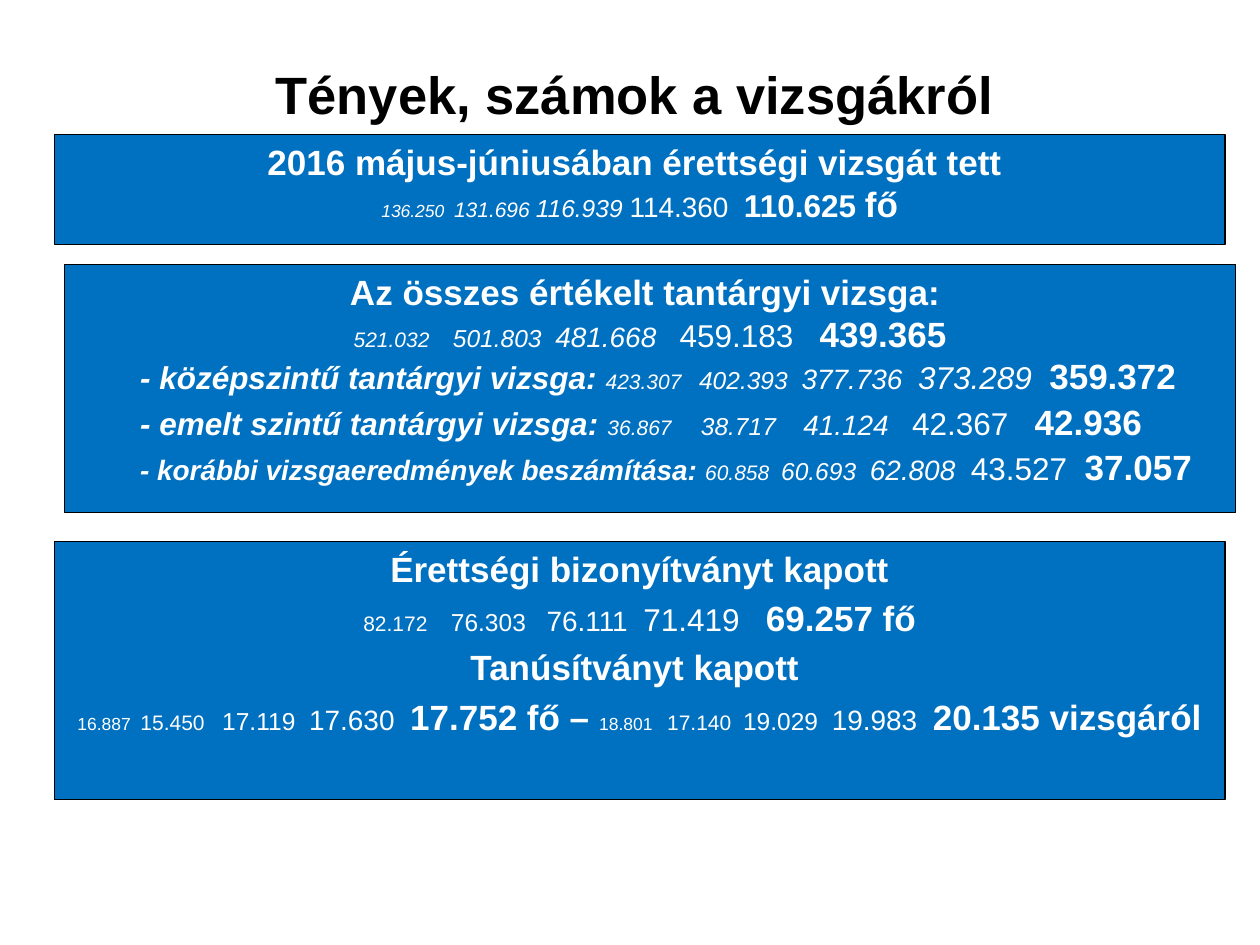
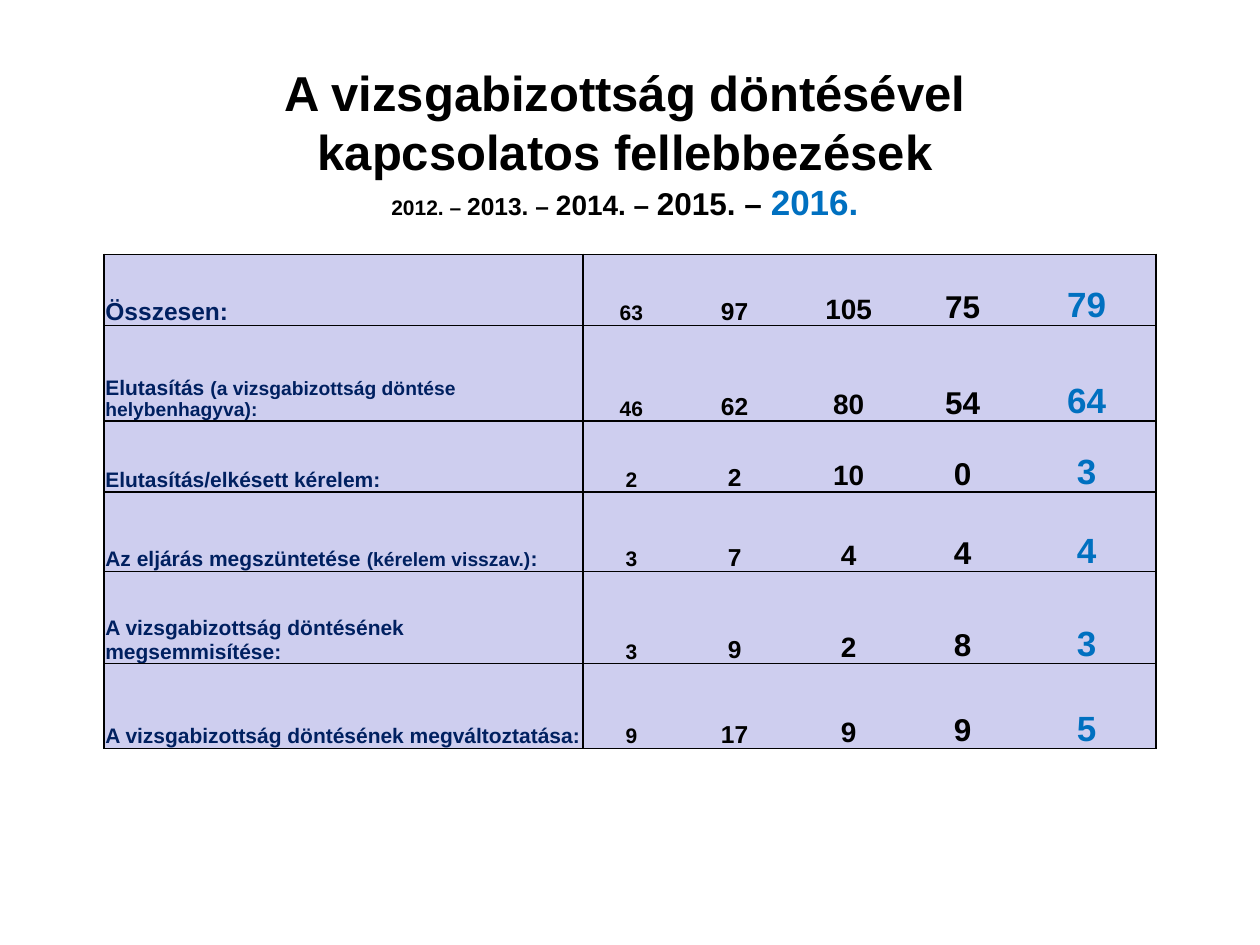
from dataclasses import dataclass
from itertools import zip_longest

from lxml.etree import SubElement
from pptx import Presentation
from pptx.dml.color import RGBColor
from pptx.enum.shapes import MSO_SHAPE as Shape
from pptx.enum.text import MSO_ANCHOR as Anchor, PP_ALIGN as Align
from pptx.oxml.ns import qn
from pptx.util import Pt

COLORS = {
    "ink": "000000",
    "paper": "FFFFFF",
    "blue": "0070C0",
    "navy": "002060",
    "lilac": "CECEEF",
}
FONT = "Arial"
SPACE_WIDTH = 0.278  # width of a space in ems
YEAR_SIZES = (12, 14, 16, 18, 20)


@dataclass(frozen=True)
class Piece:
    """A stretch of text; gap is the distance to the next one, in space widths."""
    text: str
    size: float
    color: str = "ink"
    bold: bool = True
    italic: bool = False
    gap: int = 0


@dataclass(frozen=True)
class Line:
    pieces: list[Piece]
    before: float = 0
    detail: bool = False


@dataclass(frozen=True)
class Panel:
    left: float
    top: float
    height: float
    lines: list[Line]


@dataclass(frozen=True)
class Appeal:
    height: float
    label: list[Piece]
    counts: tuple[int, ...]


def heading(text: str, size: float = 20, italic: bool = False) -> Piece:
    return Piece(text, size, "paper", italic=italic)


def label(text: str, size: float = 12) -> Piece:
    return Piece(text, size, "navy")


def figures(*values: str, gaps: tuple[int, ...], italics: int = 0,
            sizes: tuple[int, ...] = YEAR_SIZES) -> list[Piece]:
    """Yearly values in growing sizes, the first few italic and the last one bold."""
    last = len(values) - 1
    return [
        Piece(value, size, "paper", bold=i == last, italic=i < italics, gap=gap)
        for i, (value, size, gap) in enumerate(zip_longest(values, sizes, gaps, fillvalue=0))
    ]


def add_piece(paragraph, piece: Piece) -> None:
    texts = [piece.text, " "] if piece.gap else [piece.text]
    for text in texts:
        run = paragraph.add_run()
        run.text = text
        font = run.font
        font.name, font.size = FONT, Pt(piece.size)
        font.bold, font.italic = piece.bold, piece.italic
        font.color.rgb = RGBColor.from_string(COLORS[piece.color])
    if piece.gap > 1:
        widening = (piece.gap - 1) * SPACE_WIDTH * piece.size
        run.font._element.set("spc", str(round(widening * 100)))


def add_pieces(paragraph, pieces: list[Piece], align=Align.CENTER) -> None:
    paragraph.alignment = align
    for piece in pieces:
        add_piece(paragraph, piece)


def set_hanging(paragraph, left: float, hang: float) -> None:
    properties = paragraph._p.get_or_add_pPr()
    properties.set("marL", str(Pt(left)))
    properties.set("indent", str(-Pt(hang)))


def add_title(slide, left: float, top: float, width: float, height: float,
              title: Piece, years: list[Piece]) -> None:
    frame = slide.shapes.add_textbox(Pt(left), Pt(top), Pt(width), Pt(height)).text_frame
    frame.word_wrap = True
    frame.vertical_anchor = Anchor.MIDDLE
    paragraph = frame.paragraphs[0]
    add_pieces(paragraph, [title])
    if years:
        paragraph.add_line_break()
        add_pieces(paragraph, years)


def add_panel(slide, panel: Panel) -> None:
    box = slide.shapes.add_shape(Shape.RECTANGLE, Pt(panel.left), Pt(panel.top),
                                 Pt(669), Pt(panel.height))
    box.shadow.inherit = False
    box.fill.solid()
    box.fill.fore_color.rgb = RGBColor.from_string(COLORS["blue"])
    box.line.color.rgb = RGBColor.from_string(COLORS["ink"])
    box.line.width = Pt(0.75)
    frame = box.text_frame
    frame.word_wrap = True
    frame.vertical_anchor = Anchor.TOP
    for i, line in enumerate(panel.lines):
        paragraph = frame.add_paragraph() if i else frame.paragraphs[0]
        if line.before:
            paragraph.space_before = Pt(line.before)
        if line.detail:
            paragraph.level = 1
            set_hanging(paragraph, 58.5, 22.5)
        else:
            set_hanging(paragraph, 27, 27)
        add_pieces(paragraph, line.pieces, Align.LEFT if line.detail else Align.CENTER)


def set_borders(cell, sides: str) -> None:
    """Draw the sides named by letter (L, R, T, B) and switch the others off."""
    properties = cell._tc.get_or_add_tcPr()
    for side in "LRTB":
        border = SubElement(properties, qn(f"a:ln{side}"), w=str(Pt(1)))
        if side in sides:
            fill = SubElement(border, qn("a:solidFill"))
            SubElement(fill, qn("a:srgbClr"), val=COLORS["ink"])
        else:
            SubElement(border, qn("a:noFill"))


def fill_cell(cell, pieces: list[Piece], align, sides: str) -> None:
    set_borders(cell, sides)
    cell.fill.solid()
    cell.fill.fore_color.rgb = RGBColor.from_string(COLORS["lilac"])
    cell.margin_left = cell.margin_right = cell.margin_top = Pt(0.72)
    cell.margin_bottom = Pt(0)
    cell.vertical_anchor = Anchor.BOTTOM
    add_pieces(cell.text_frame.paragraphs[0], pieces, align)


def add_appeals(slide, appeals: list[Appeal], widths: tuple[float, ...]) -> None:
    height = sum(appeal.height for appeal in appeals)
    table = slide.shapes.add_table(len(appeals), len(widths), Pt(59.5), Pt(145.3),
                                   Pt(sum(widths)), Pt(height)).table
    table.first_row = table.horz_banding = False
    for column, width in zip(table.columns, widths):
        column.width = Pt(width)
    for r, appeal in enumerate(appeals):
        table.rows[r].height = Pt(appeal.height)
        fill_cell(table.cell(r, 0), appeal.label, Align.LEFT, "LRTB")
        for c, (count, size) in enumerate(zip(appeal.counts, YEAR_SIZES), start=1):
            latest = c == len(YEAR_SIZES)
            sides = "TB" + ("L" if c == 1 else "") + ("R" if latest else "")
            value = Piece(str(count), size, "blue" if latest else "ink")
            fill_cell(table.cell(r, c), [value], Align.CENTER, sides)


PANELS = [
    Panel(31, 77, 62.6, [
        Line([heading("2016 május-júniusában érettségi vizsgát tett ")]),
        Line(figures("136.250", "131.696", "116.939", "114.360", "110.625",
                     gaps=(2, 1, 1, 2, 1), italics=3, sizes=(10, 12, 14, 16, 18))
             + [heading("fő")]),
    ]),
    Panel(37, 151.2, 141.8, [
        Line([heading("Az összes értékelt tantárgyi vizsga: ")]),
        Line(figures("521.032", "501.803", "481.668", "459.183", "439.365",
                     gaps=(4, 2, 3, 3), italics=3)),
        Line([heading("- középszintű tantárgyi vizsga: ", 18, True)]
             + figures("423.307", "402.393", "377.736", "373.289", "359.372",
                       gaps=(3, 2, 2, 2), italics=4), detail=True),
        Line([heading("- emelt szintű tantárgyi vizsga: ", 18, True)]
             + figures("36.867", "38.717", "41.124", "42.367", "42.936",
                       gaps=(5, 4, 3, 3), italics=3), before=2, detail=True),
        Line([heading("- korábbi vizsgaeredmények beszámítása: ", 16, True)]
             + figures("60.858", "60.693", "62.808", "43.527", "37.057",
                       gaps=(2, 2, 2, 2), italics=3), before=2, detail=True),
    ]),
    Panel(31, 309.6, 147.4, [
        Line([heading("Érettségi bizonyítványt kapott")]),
        Line(figures("82.172", "76.303", "76.111", "71.419", "69.257 fő",
                     gaps=(4, 3, 2, 3)), before=4),
        Line([heading("Tanúsítványt kapott ")], before=4),
        Line(figures("16.887", "15.450", "17.119", "17.630", "17.752 fő –",
                     gaps=(2, 3, 2, 2, 1), sizes=(10, 12, 14, 16, 20))
             + figures("18.801", "17.140", "19.029", "19.983", "20.135 vizsgáról",
                       gaps=(3, 2, 2, 2), sizes=(10, 12, 14, 16, 20)), before=4),
    ]),
]

APPEALS = [
    Appeal(40.6, [label("Összesen:", 14)], (63, 97, 105, 75, 79)),
    Appeal(54.6, [label("Elutasítás "),
                  label("(a vizsgabizottság döntése helybenhagyva):", 11)],
           (46, 62, 80, 54, 64)),
    Appeal(40.6, [label("Elutasítás/elkésett kérelem:")], (2, 2, 10, 0, 3)),
    Appeal(45.4, [label("Az eljárás megszüntetése "), label("(kérelem visszav.)", 11),
                  label(":")], (3, 7, 4, 4, 4)),
    Appeal(52.8, [label("A vizsgabizottság döntésének megsemmisítése:")], (3, 9, 2, 8, 3)),
    Appeal(48.4, [label("A vizsgabizottság döntésének megváltoztatása:")], (9, 17, 9, 9, 5)),
]


def main() -> None:
    deck = Presentation()
    deck.slide_width, deck.slide_height = Pt(720), Pt(540)
    blank = deck.slide_layouts[6]

    facts = deck.slides.add_slide(blank)
    add_title(facts, 82, 20.2, 569.5, 67, Piece("Tények, számok a vizsgákról ", 30), [])
    for panel in PANELS:
        add_panel(facts, panel)

    decisions = deck.slides.add_slide(blank)
    years = [Piece(f"{year}. – ", size) for year, size in zip(range(2012, 2016), YEAR_SIZES)]
    add_title(decisions, 133.2, 49, 447.8, 64.8,
              Piece("A vizsgabizottság döntésével kapcsolatos fellebbezések", 28),
              years + [Piece("2016.", 20, "blue")])
    add_appeals(decisions, APPEALS, (273.6, 55.4, 62.6, 67.7, 62.6, 79.2))

    deck.save("out.pptx")


if __name__ == "__main__":
    main()
